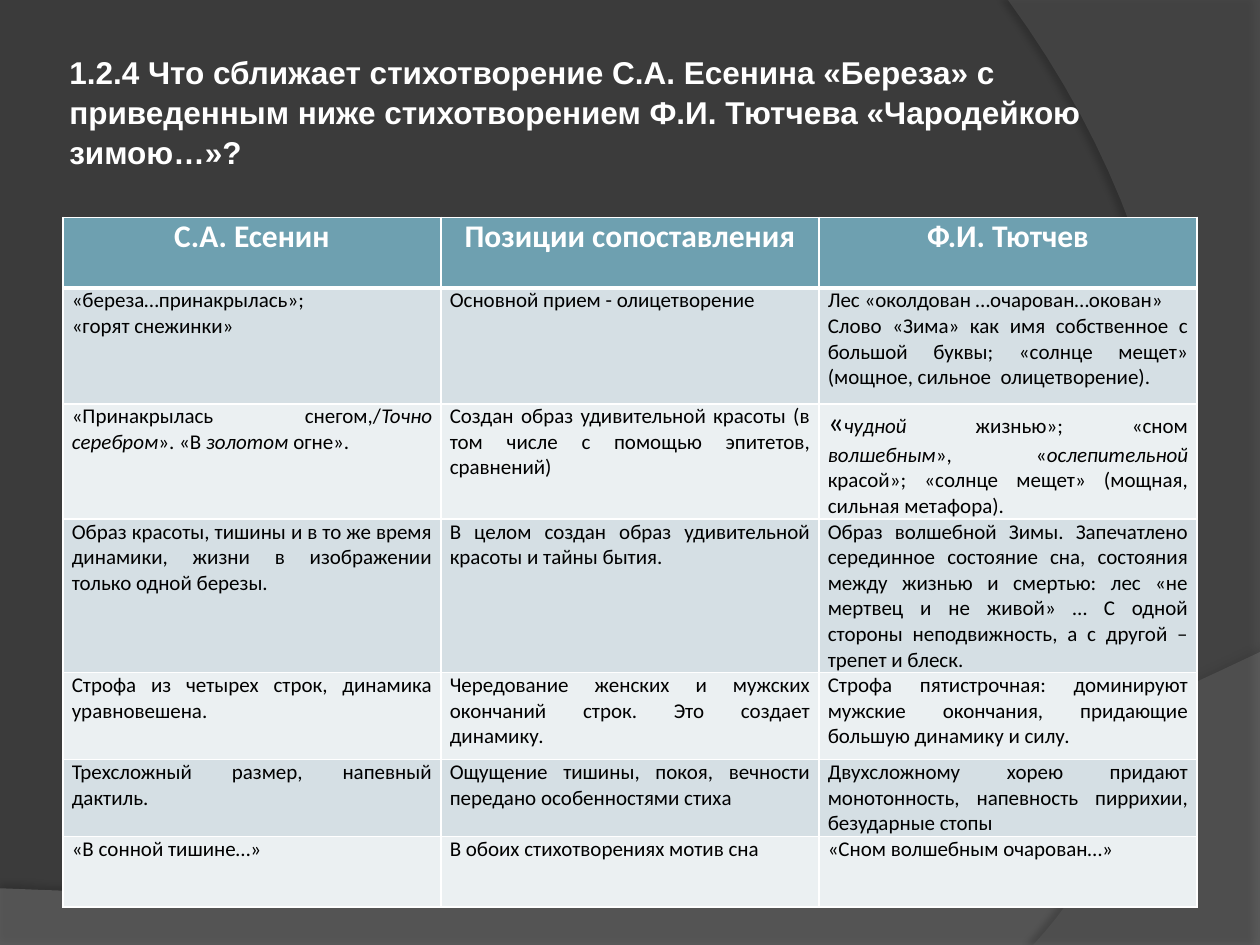
from lxml import etree
from pptx import Presentation
from pptx.dml.color import RGBColor
from pptx.enum import text
from pptx.oxml import parse_xml
from pptx.oxml.ns import nsdecls, qn
from pptx.util import Inches, Pt

WIDTH, HEIGHT = 10, 7.5
TITLE = ("1.2.4 Что сближает стихотворение С.А. Есенина «Береза» с приведенным ниже "
         "стихотворением Ф.И. Тютчева «Чародейкою зимою…»?")
# Asterisks enclose italics, line breaks separate paragraphs
COMPARISON = [
    ("С.А. Есенин", "Позиции сопоставления", "Ф.И. Тютчев"),
    ("«береза…принакрылась»;\n«горят снежинки»",
     "Основной прием - олицетворение",
     "Лес «околдован …очарован…окован»\nСлово «Зима» как имя собственное с большой буквы; "
     "«солнце мещет» (мощное, сильное  олицетворение)."),
    ("«Принакрылась снегом,/*Точно серебром*». «В *золотом* огне».",
     "Создан образ удивительной красоты (в том числе с помощью эпитетов, сравнений)",
     "«*чудной* жизнью»; «сном *волшебным*», «*ослепительной* красой»; "
     "«солнце мещет» (мощная, сильная метафора)."),
    ("Образ красоты, тишины и в то же время динамики, жизни в изображении только одной березы.",
     "В целом создан образ удивительной красоты и тайны бытия.",
     "Образ волшебной Зимы. Запечатлено серединное состояние сна, состояния между жизнью и "
     "смертью: лес «не мертвец и не живой» … С одной стороны неподвижность, а с другой – "
     "трепет и блеск."),
    ("Строфа из четырех строк, динамика уравновешена.",
     "Чередование женских и мужских окончаний строк. Это создает динамику.",
     "Строфа пятистрочная: доминируют мужские окончания, придающие большую динамику и силу."),
    ("Трехсложный размер, напевный дактиль.",
     "Ощущение тишины, покоя, вечности передано особенностями стиха",
     "Двухсложному хорею придают монотонность, напевность пиррихии, безударные стопы"),
    ("«В сонной тишине…»", "В обоих стихотворениях мотив сна", "«Сном волшебным очарован…»"),
]
ROW_HEIGHTS = [0.56, 0.92, 0.85, 1.15, 0.69, 0.57, 0.56]


def color(value):
    return RGBColor.from_string(value)


def curve(start, control1, control2, end, steps=40):
    """Points along a cubic curve, as shares of the slide."""
    points = []
    for step in range(steps + 1):
        t = step / steps
        weights = ((1 - t) ** 3, 3 * t * (1 - t) ** 2, 3 * t * t * (1 - t), t ** 3)
        points.append(tuple(sum(w * p[axis] for w, p in zip(weights, (start, control1, control2, end)))
                            for axis in (0, 1)))
    return points


class Deck:
    white, header, bands = "FFFFFF", "6EA0B0", ("EBF0F2", "D5DFE4")
    title_font, table_font = "Arial", "Calibri"

    def __init__(self, background):
        self.presentation = Presentation()
        self.presentation.slide_width = Inches(WIDTH)
        self.presentation.slide_height = Inches(HEIGHT)
        self.slide = self.presentation.slides.add_slide(self.presentation.slide_layouts[5])
        fill = self.slide.background.fill
        fill.solid()
        fill.fore_color.rgb = color(background)
        self.backdrops = 0

    def box(self, left, top, width, height):
        return (Inches(left * WIDTH), Inches(top * HEIGHT),
                Inches(width * WIDTH), Inches(height * HEIGHT))

    def style(self, run, font, size, value, bold=False, italic=False):
        run.font.name, run.font.size = font, Pt(size)
        run.font.bold, run.font.italic = bold, italic
        run.font.color.rgb = color(value)

    def backdrop(self, points, fill, opacity, shadow_opacity, distance, direction):
        """A translucent shape with a soft shadow, behind everything else."""
        corners = [(Inches(x * WIDTH), Inches(y * HEIGHT)) for x, y in points]
        builder = self.slide.shapes.build_freeform(*corners[0])
        builder.add_line_segments(corners[1:], close=True)
        shape = builder.convert_to_shape()
        shape.fill.solid()
        shape.fill.fore_color.rgb = color(fill)
        shape.line.fill.background()
        fill_color = shape._element.spPr.find(qn("a:solidFill"))[0]
        etree.SubElement(fill_color, qn("a:alpha"), val=str(opacity * 1000))
        shape._element.spPr.append(parse_xml(
            f'<a:effectLst {nsdecls("a")}><a:outerShdw blurRad="{Pt(4)}" dist="{Pt(distance)}" '
            f'dir="{direction * 60000}" algn="ctr" rotWithShape="0"><a:srgbClr val="000000">'
            f'<a:alpha val="{shadow_opacity * 1000}"/></a:srgbClr></a:outerShdw></a:effectLst>'))
        shape._element.getparent().insert(2 + self.backdrops, shape._element)
        self.backdrops += 1

    def title(self, wording, *place):
        title = self.slide.shapes.title
        title.left, title.top, title.width, title.height = self.box(*place)
        frame = title.text_frame
        frame.text = wording
        frame.word_wrap = True
        frame.auto_size = text.MSO_AUTO_SIZE.NONE
        frame.vertical_anchor = text.MSO_ANCHOR.BOTTOM
        frame.margin_left = frame.margin_right = Inches(0.05)
        frame.margin_top, frame.margin_bottom = 0, Inches(0.22)
        paragraph = frame.paragraphs[0]
        paragraph.alignment = text.PP_ALIGN.LEFT
        paragraph.line_spacing = 1.05
        self.style(paragraph.runs[0], self.title_font, 18, self.white, bold=True)

    def borders(self, cell, **widths):
        properties = cell._tc.get_or_add_tcPr()
        for index, (side, width) in enumerate(widths.items()):
            properties.insert(index, parse_xml(
                f'<a:ln{side} {nsdecls("a")} w="{Pt(width)}"><a:solidFill>'
                f'<a:srgbClr val="{self.white}"/></a:solidFill></a:ln{side}>'))

    def cell(self, cell, wording, row):
        heading = row == 0
        cell.margin_left = cell.margin_right = Inches(0.07)
        cell.margin_top = cell.margin_bottom = 0
        cell.fill.solid()
        cell.fill.fore_color.rgb = color(self.header if heading else self.bands[row % 2])
        self.borders(cell, L=1, R=1, T=3 if row == 1 else 1, B=3 if heading else 1)
        frame = cell.text_frame
        frame.text = "\n".join("" for _ in wording.split("\n"))
        for paragraph, line in zip(frame.paragraphs, wording.split("\n")):
            paragraph.alignment = text.PP_ALIGN.CENTER if heading else text.PP_ALIGN.JUSTIFY
            for index, part in enumerate(line.split("*")):
                run = paragraph.add_run()
                run.text = part
                self.style(run, self.table_font, 18 if heading else 12,
                           self.white if heading else "000000", heading, index % 2 == 1)

    def table(self, rows, heights, *place):
        frame = self.slide.shapes.add_table(len(rows), len(rows[0]), *self.box(*place))
        table = frame.table
        for row, (wordings, height) in enumerate(zip(rows, heights)):
            table.rows[row].height = Inches(height)
            for column, wording in enumerate(wordings):
                self.cell(table.cell(row, column), wording, row)
        return table


def main():
    deck = Deck("3B3B3B")

    # Backdrop: lower wave and right-hand arc
    deck.backdrop([(0, 0.94), (0, 1), (1, 1)]
                  + curve((1, 0.69), (0.56, 0.97), (0.39, 0.96), (0, 0.94)),
                  "7F7F7F", 45, 35, 3.5, 270)
    deck.backdrop([(1, 0), (1, 1)]
                  + curve((0.82, 1), (0.94, 0.83), (1.02, 0.4), (0.8, 0)),
                  "5E5E5E", 40, 45, 4, 180)

    # Question
    deck.title(TITLE, 0.05, 0.03, 0.91, 0.18)

    # Comparison of the two poems, with one enlarged opening quote
    table = deck.table(COMPARISON, ROW_HEIGHTS, 0.05, 0.23, 0.9, 0.71)
    table.cell(2, 2).text_frame.paragraphs[0].runs[0].font.size = Pt(18)

    deck.presentation.save("out.pptx")


if __name__ == "__main__":
    main()
